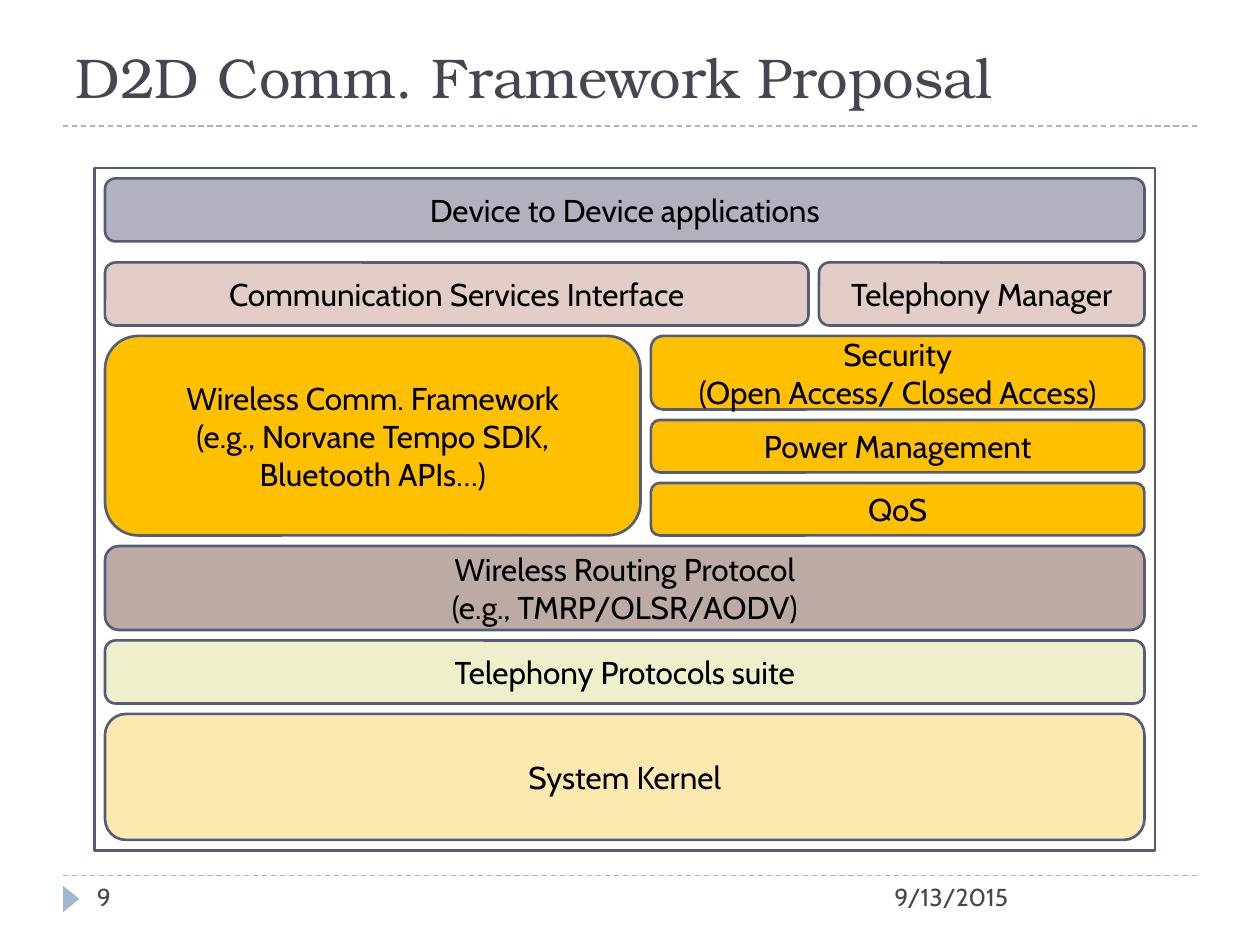
from pptx import Presentation
from pptx.dml.color import RGBColor
from pptx.enum.dml import MSO_LINE_DASH_STYLE as DASH
from pptx.enum.shapes import MSO_CONNECTOR as CONNECTOR, MSO_SHAPE as SHAPE
from pptx.enum.text import MSO_ANCHOR as ANCHOR, PP_ALIGN as ALIGN
from pptx.oxml.ns import qn
from pptx.util import Inches, Pt
from lxml.etree import SubElement

UNIT = Inches(1) // 12
GAP = UNIT
BODY_FONT, TITLE_FONT = "Cabin", "TeX Gyre Bonum"
INK, OUTLINE, ACCENT = "464653", "545C79", "9FB8CD"
APPS, SERVICES, CORE = "B2B2BE", "E3CEC7", "FFC000"
ROUTING, PROTOCOLS, KERNEL = "BCABA5", "EDF0CA", "FCE9AF"


def color(hex_code):
    """Turn a hex string into a colour."""
    return RGBColor.from_string(hex_code)


def write(frame, text, size=18, font=BODY_FONT, ink="000000",
          align=ALIGN.LEFT, anchor=ANCHOR.TOP):
    """Fill a text frame, one paragraph for each line of text."""
    frame.word_wrap = True
    frame.vertical_anchor = anchor
    for index, line in enumerate(text.split("\n")):
        paragraph = frame.add_paragraph() if index else frame.paragraphs[0]
        paragraph.alignment = align
        run = paragraph.add_run()
        run.text = line
        run.font.size = Pt(size)
        run.font.name = font
        run.font.color.rgb = color(ink)


def add_label(slide, box, text, **style):
    """Place free-standing text in a box."""
    write(slide.shapes.add_textbox(*box).text_frame, text, **style)


def add_panel(slide, kind, box, fill=None, outline=None):
    """Place a flat preset shape with optional fill and outline."""
    panel = slide.shapes.add_shape(kind, *box)
    panel.shadow.inherit = False
    if fill:
        panel.fill.solid()
        panel.fill.fore_color.rgb = color(fill)
    else:
        panel.fill.background()
    if outline:
        panel.line.color.rgb = color(outline)
        panel.line.width = Pt(1.5)
    else:
        panel.line.fill.background()
    return panel


def add_rule(slide, left, top, width):
    """Draw a dashed horizontal rule."""
    rule = slide.shapes.add_connector(
        CONNECTOR.STRAIGHT, left, top, left + width, top)
    rule.line.color.rgb = color(ACCENT)
    rule.line.width = Pt(0.75)
    rule.line.dash_style = DASH.DASH
    SubElement(rule._element.spPr, qn("a:effectLst"))


def add_layer(slide, box, text, fill):
    """Place one labelled layer of the framework."""
    layer = add_panel(slide, SHAPE.ROUNDED_RECTANGLE, box, fill, OUTLINE)
    write(layer.text_frame, text, align=ALIGN.CENTER, anchor=ANCHOR.MIDDLE)


def split(start, sizes):
    """Yield the start and length of consecutive parts set one gap apart."""
    for size in sizes:
        yield start, size * UNIT
        start += size * UNIT + GAP


def build_header(slide, left, top, width, height):
    """Place the title and the rule below it."""
    add_rule(slide, left, top + height, width)
    add_label(slide, (left, top, width, height - Inches(0.08)),
              "D2D Comm. Framework Proposal", size=32, font=TITLE_FONT,
              ink=INK, anchor=ANCHOR.BOTTOM)


def build_footer(slide, left, top, width, height):
    """Place the rule, marker, slide number and date."""
    add_rule(slide, left, top, width)
    marker_box = (left - Inches(0.04), top + Inches(0.12),
                  Inches(0.21), Inches(0.13))
    marker = add_panel(slide, SHAPE.ISOSCELES_TRIANGLE, marker_box, ACCENT)
    marker.rotation = 90
    date_width = Inches(2.5)
    add_label(slide, (left + width - date_width, top, date_width, height),
              "9/13/2015", size=14, ink=INK)
    add_label(slide, (left + Inches(0.17), top, Inches(2.17), height),
              "9", size=14, ink=INK)


def build_core(slide, left, top, width, height):
    """Place the wireless framework beside its three support services."""
    (wireless_left, wireless_width), (support_left, support_width) = split(
        left, (51, 47))
    add_layer(slide, (wireless_left, top, wireless_width, height),
              "Wireless Comm. Framework\n(e.g., Norvane Tempo SDK,\n"
              "Bluetooth APIs…)", CORE)
    services = ("Security\n(Open Access/ Closed Access)",
                "Power Management", "QoS")
    for service, (y, size) in zip(services, split(top, (7, 5, 5))):
        add_layer(slide, (support_left, y, support_width, size),
                  service, CORE)


def build_framework(slide, left, top, width, height):
    """Place the outer frame and the stack of layers inside it."""
    add_panel(slide, SHAPE.RECTANGLE, (left, top, width, height),
              outline=OUTLINE)
    left, width = left + GAP, width - 2 * GAP
    apps_top, apps_height = top + GAP, 6 * UNIT
    add_layer(slide, (left, apps_top, width, apps_height),
              "Device to Device applications", APPS)

    rows = split(apps_top + apps_height + 2 * GAP, (6, 19, 8, 6, 12))
    y, size = next(rows)
    interfaces = ("Communication Services Interface", "Telephony Manager")
    for name, (x, span) in zip(interfaces, split(left, (67, 31))):
        add_layer(slide, (x, y, span, size), name, SERVICES)

    y, size = next(rows)
    build_core(slide, left, y, width, size)

    lower_layers = (
        ("Wireless Routing Protocol\n(e.g., TMRP/OLSR/AODV)", ROUTING),
        ("Telephony Protocols suite", PROTOCOLS),
        ("System Kernel", KERNEL),
    )
    for (name, fill), (y, size) in zip(lower_layers, rows):
        add_layer(slide, (left, y, width, size), name, fill)


def main():
    """Build and save the slide."""
    deck = Presentation()
    deck.slide_width, deck.slide_height = Inches(10), Inches(7.5)
    slide = deck.slides.add_slide(deck.slide_layouts[6])
    build_header(slide, Inches(0.5), Inches(0), Inches(9), Inches(1))
    build_framework(slide, 9 * UNIT, 16 * UNIT, 101 * UNIT, 65 * UNIT)
    build_footer(slide, Inches(0.5), Inches(6.95), Inches(9), Inches(0.4))
    deck.save("out.pptx")


if __name__ == "__main__":
    main()
